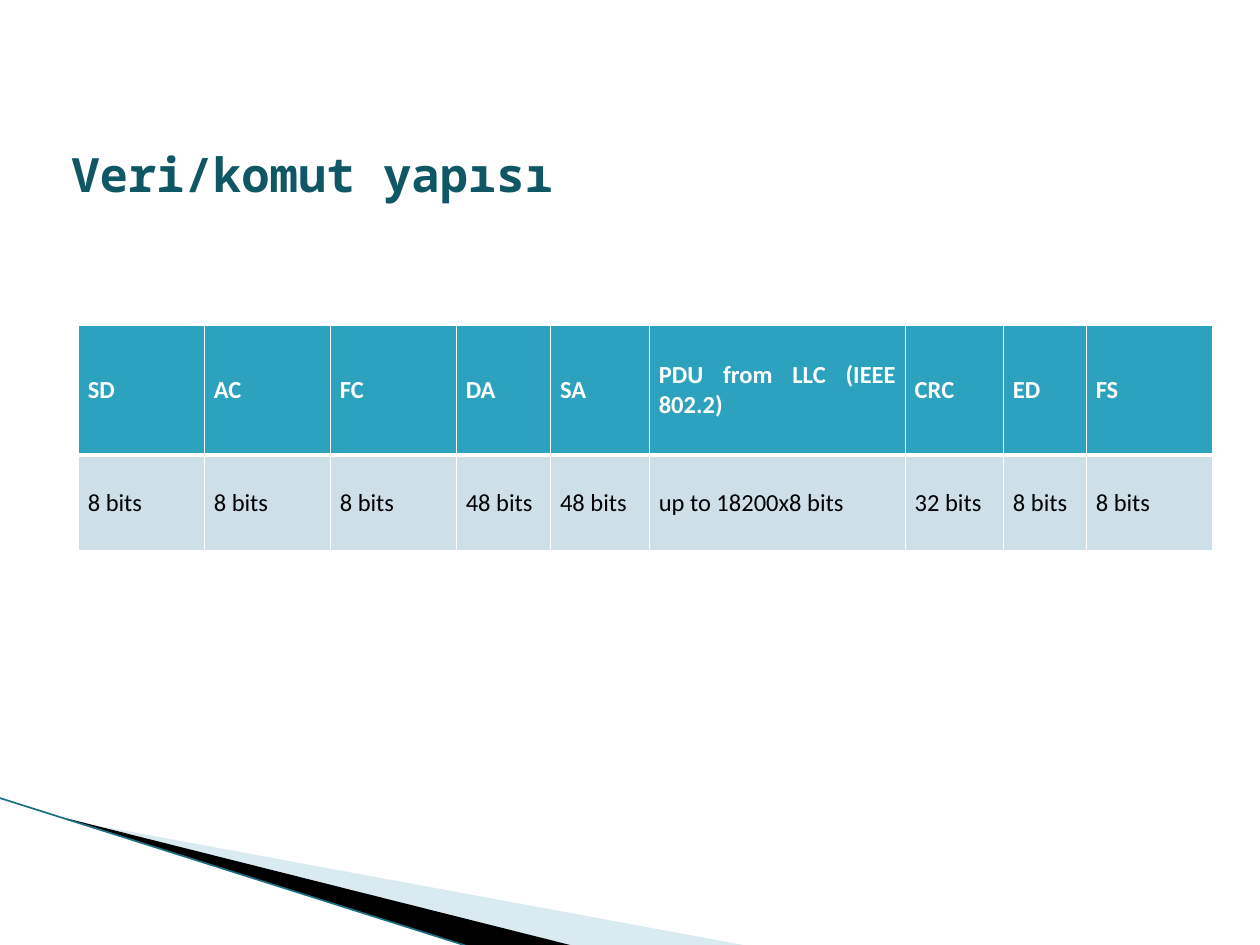
from lxml.etree import SubElement
from pptx import Presentation
from pptx.dml.color import RGBColor
from pptx.enum.text import MSO_ANCHOR as ANCHOR, PP_ALIGN as ALIGN
from pptx.oxml.ns import qn
from pptx.util import Cm, Pt

WHITE = RGBColor(0xFF, 0xFF, 0xFF)
BLACK = RGBColor(0, 0, 0)
TEAL = RGBColor(0x2D, 0xA2, 0xBF)
DARK_TEAL = RGBColor(0x10, 0x57, 0x66)
EDGE_TEAL = RGBColor(0x1B, 0x6F, 0x83)
PALE_BLUE = RGBColor(0xCD, 0xE0, 0xE8)
SKY = RGBColor(0xA0, 0xCB, 0xDC)

FIELDS = [
    ("SD", "8 bits", 2.54),
    ("AC", "8 bits", 2.54),
    ("FC", "8 bits", 2.54),
    ("DA", "48 bits", 1.9),
    ("SA", "48 bits", 1.99),
    ("PDU from LLC (IEEE 802.2)", "up to 18200x8 bits", 5.16),
    ("CRC", "32 bits", 1.98),
    ("ED", "8 bits", 1.67),
    ("FS", "8 bits", 2.54),
]
ROW_HEIGHTS = (2.62, 1.93)


def write(tf, text, font="Calibri", size=14, color=BLACK, bold=False, align=ALIGN.LEFT):
    p = tf.paragraphs[0]
    p.alignment = align
    r = p.add_run()
    r.text = text
    r.font.name = font
    r.font.size = Pt(size)
    r.font.bold = bold
    r.font.color.rgb = color


class SlideBuilder:
    title_font = "Noto Sans Mono"
    rule = 1
    header_rule = 3

    def __init__(self, slide):
        self.s = slide

    def wedge(self, points, frame, color, opacity=100):
        start, *rest = [(Cm(x), Cm(y)) for x, y in points]
        builder = self.s.shapes.build_freeform(*start)
        builder.add_line_segments(rest, close=True)
        sp = builder.convert_to_shape()
        self.reframe(sp, *[Cm(v) for v in frame])
        sp.shadow.inherit = False
        sp.line.fill.background()
        sp.fill.solid()
        sp.fill.fore_color.rgb = color
        if opacity < 100:
            clr = sp.fill._xPr.find(".//" + qn("a:srgbClr"))
            SubElement(clr, qn("a:alpha"), val=str(opacity * 1000))

    def reframe(self, sp, x, y, w, h):
        dx, dy = sp.left - x, sp.top - y
        outline = sp._element.spPr.find(".//" + qn("a:path"))
        for pt in outline.iter(qn("a:pt")):
            pt.set("x", str(int(pt.get("x")) + dx))
            pt.set("y", str(int(pt.get("y")) + dy))
        outline.set("w", str(w))
        outline.set("h", str(h))
        sp.left, sp.top, sp.width, sp.height = x, y, w, h

    def line(self, x1, y1, x2, y2, color, width):
        sp = self.s.shapes.add_connector(1, Cm(x1), Cm(y1), Cm(x2), Cm(y2))
        sp.line.color.rgb = color
        sp.line.width = Pt(width)
        SubElement(sp._element.spPr, qn("a:effectLst"))

    def title(self, text, x, y, w, h):
        tf = self.s.shapes.add_textbox(Cm(x), Cm(y), Cm(w), Cm(h)).text_frame
        tf.word_wrap = True
        write(tf, text, font=self.title_font, size=27, color=DARK_TEAL, bold=True)

    def borders(self, cell, top, bottom):
        tc_pr = cell._tc.get_or_add_tcPr()
        widths = {"lnL": self.rule, "lnR": self.rule, "lnT": top, "lnB": bottom}
        for tag, width in widths.items():
            ln = SubElement(tc_pr, qn("a:" + tag), w=str(Pt(width)))
            fill = SubElement(ln, qn("a:solidFill"))
            SubElement(fill, qn("a:srgbClr"), val=str(WHITE))

    def cell(self, cell, text, header):
        cell.margin_left = cell.margin_right = Cm(0.19)
        cell.margin_top = cell.margin_bottom = 0
        cell.vertical_anchor = ANCHOR.MIDDLE
        if header:
            self.borders(cell, self.rule, self.header_rule)
        else:
            self.borders(cell, self.header_rule, self.rule)
        cell.fill.solid()
        cell.fill.fore_color.rgb = TEAL if header else PALE_BLUE
        write(cell.text_frame, text, color=WHITE if header else BLACK,
              bold=header, align=ALIGN.JUSTIFY)

    def table(self, fields, heights, x, y):
        width = sum(w for _, _, w in fields)
        table = self.s.shapes.add_table(len(heights), len(fields), Cm(x), Cm(y),
                                        Cm(width), Cm(sum(heights))).table
        for row, height in zip(table.rows, heights):
            row.height = Cm(height)
        for col, (name, bits, w) in enumerate(fields):
            table.columns[col].width = Cm(w)
            self.cell(table.cell(0, col), name, True)
            self.cell(table.cell(1, col), bits, False)


def main():
    prs = Presentation()
    prs.slide_width, prs.slide_height = Cm(25.4), Cm(19.05)
    b = SlideBuilder(prs.slides.add_slide(prs.slide_layouts[6]))
    b.wedge([(1.4, 16.54), (15.14, 19.08), (11.58, 19.08), (1.4, 16.51)],
            (1.98, 13.89, 10.57, 4.01), SKY, opacity=40)
    b.wedge([(1.35, 16.5), (11.61, 19.08), (9.45, 19.08), (1.37, 16.51)],
            (-0.15, 16.08, 10.57, 2.34), BLACK)
    b.line(-0.03, 16.08, 9.44, 19.08, EDGE_TEAL, 0.95)
    b.table(FIELDS, ROW_HEIGHTS, 1.58, 6.55)
    b.title("Veri/komut yapısı", 1.19, 2.81, 22.86, 3.18)
    prs.save("out.pptx")


if __name__ == "__main__":
    main()
